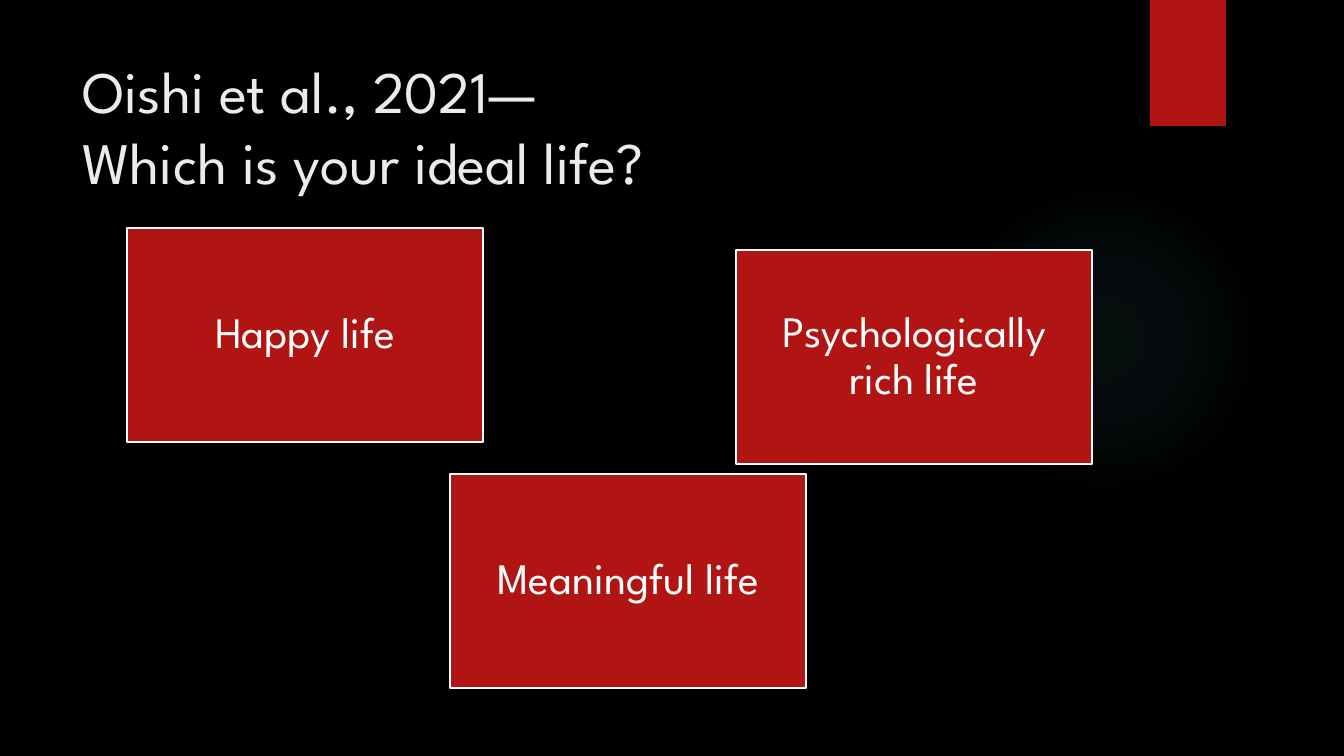
from pptx import Presentation
from pptx.dml.color import RGBColor
from pptx.enum.shapes import MSO_SHAPE
from pptx.enum.text import MSO_ANCHOR, MSO_AUTO_SIZE, PP_ALIGN
from pptx.oxml import parse_xml
from pptx.oxml.ns import nsdecls, qn
from pptx.util import Emu, Pt

RECTANGLE, OVAL = MSO_SHAPE.RECTANGLE, MSO_SHAPE.OVAL
TOP, MIDDLE = MSO_ANCHOR.TOP, MSO_ANCHOR.MIDDLE
LEFT, CENTER = PP_ALIGN.LEFT, PP_ALIGN.CENTER
NO_AUTOFIT = MSO_AUTO_SIZE.NONE

PX_PER_INCH = 100.8
SLIDE_WIDTH, SLIDE_HEIGHT = 1344, 756
FONT = "League Spartan"
BLACK, RED, WHITE, PALE, TEAL = "000000", "B01513", "FFFFFF", "EBEBEB", "50B9C1"
GLOW_STOPS = [(0, 7), (36, 6), (69, 0)]
CARD_WIDTH, CARD_HEIGHT = 356, 214
CARDS = [
    ("Happy life", 127, 228),
    ("Meaningful life", 450, 474),
    ("Psychologically rich life", 736, 250),
]


def px(length):
    """Turn pixels into EMU."""
    return Emu(round(length * 914400 / PX_PER_INCH))


def set_color(target, color):
    """Give a fill, line fill or font colour format a hex colour."""
    target.rgb = RGBColor.from_string(color)


def add_run(paragraph, text, size, color):
    """Add one run of formatted text."""
    run = paragraph.add_run()
    run.text = text
    run.font.name = FONT
    run.font.size = Pt(size)
    set_color(run.font.color, color)


def add_block(slide, kind, box, color):
    """Add a plain filled shape without outline or shadow."""
    shape = slide.shapes.add_shape(kind, *map(px, box))
    shape.shadow.inherit = False
    shape.fill.solid()
    set_color(shape.fill.fore_color, color)
    shape.line.fill.background()
    return shape


def add_glow(slide, box):
    """Add the faint round glow that fades towards its rim."""
    shape = add_block(slide, OVAL, box, TEAL)
    stops = "".join(
        f'<a:gs pos="{position * 1000}"><a:srgbClr val="{TEAL}">'
        f'<a:alpha val="{alpha * 1000}"/></a:srgbClr></a:gs>'
        for position, alpha in GLOW_STOPS
    )
    gradient = parse_xml(
        f'<a:gradFill {nsdecls("a")}><a:gsLst>{stops}</a:gsLst><a:path path="circle">'
        '<a:fillToRect l="50000" t="50000" r="50000" b="50000"/></a:path></a:gradFill>'
    )
    properties = shape.element.spPr
    properties.replace(properties.find(qn("a:solidFill")), gradient)


def add_title(slide, box, lines):
    """Place the title and fill it line by line."""
    title = slide.shapes.title
    title.left, title.top, title.width, title.height = map(px, box)
    frame = title.text_frame
    frame.auto_size = NO_AUTOFIT
    frame.word_wrap = True
    frame.vertical_anchor = TOP
    paragraph = frame.paragraphs[0]
    paragraph.alignment = LEFT
    for index, line in enumerate(lines):
        if index:
            paragraph.add_line_break()
        add_run(paragraph, line, 42, PALE)


def add_card(slide, box, label):
    """Add an outlined card with a centred label."""
    card = add_block(slide, RECTANGLE, box, RED)
    card.line.fill.solid()
    set_color(card.line.fill.fore_color, WHITE)
    card.line.width = Pt(1.5)
    frame = card.text_frame
    frame.word_wrap = True
    frame.vertical_anchor = MIDDLE
    frame.margin_left = frame.margin_right = px(13)
    frame.margin_top = frame.margin_bottom = px(13)
    paragraph = frame.paragraphs[0]
    paragraph.alignment = CENTER
    paragraph.line_spacing = 0.9
    add_run(paragraph, label, 31, WHITE)


def build_slide(presentation):
    """Build the slide on ideal lives."""
    slide = presentation.slides.add_slide(presentation.slide_layouts[5])
    slide.background.fill.solid()
    set_color(slide.background.fill.fore_color, BLACK)
    add_glow(slide, (949, 184, 310, 310))
    add_block(slide, RECTANGLE, (1150, 0, 76, 126), RED)
    add_title(slide, (72, 50, 1037, 154), ["Oishi et al., 2021—", "Which is your ideal life?"])
    for label, left, top in CARDS:
        add_card(slide, (left, top, CARD_WIDTH, CARD_HEIGHT), label)


def main():
    """Create and save the presentation."""
    presentation = Presentation()
    presentation.slide_width = px(SLIDE_WIDTH)
    presentation.slide_height = px(SLIDE_HEIGHT)
    build_slide(presentation)
    presentation.save("out.pptx")


if __name__ == "__main__":
    main()
